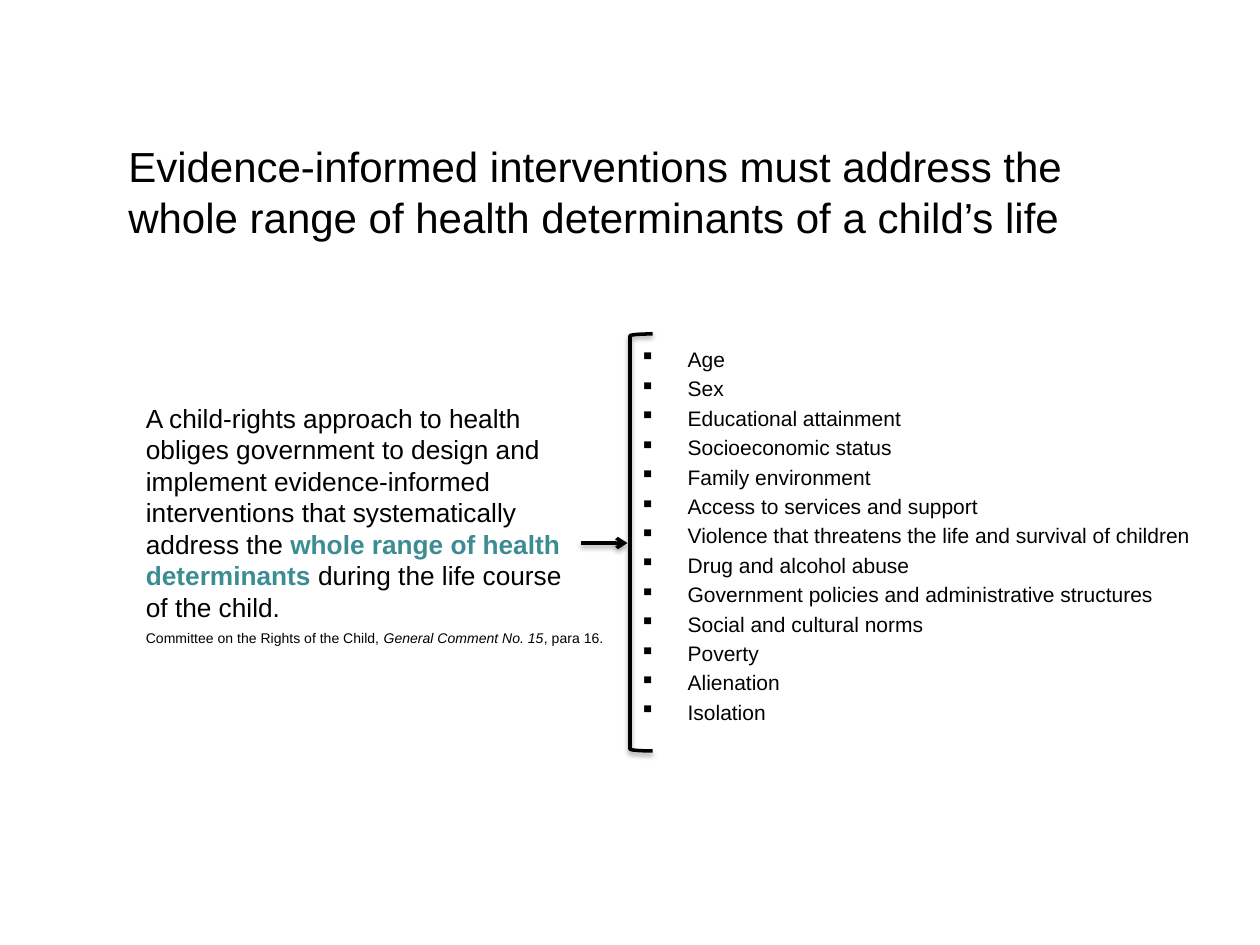
from lxml import etree
from pptx import Presentation
from pptx.dml.color import RGBColor
from pptx.enum.shapes import MSO_CONNECTOR, MSO_SHAPE
from pptx.oxml import parse_xml
from pptx.oxml.ns import nsdecls, qn
from pptx.util import Inches, Pt

BLACK = RGBColor(0x00, 0x00, 0x00)
TEAL = RGBColor(0x3C, 0x8C, 0x93)
LEFT_BRACKET = MSO_SHAPE.LEFT_BRACKET
STRAIGHT = MSO_CONNECTOR.STRAIGHT

DETERMINANTS = [
    "Age",
    "Sex",
    "Educational attainment",
    "Socioeconomic status",
    "Family environment",
    "Access to services and support",
    "Violence that threatens the life and survival of children",
    "Drug and alcohol abuse",
    "Government policies and administrative structures",
    "Social and cultural norms",
    "Poverty",
    "Alienation",
    "Isolation",
]


def add_run(paragraph, text, *, size, color=BLACK, bold=False, italic=False, font="Arial"):
    run = paragraph.add_run()
    run.text = text
    run.font.name = font
    run.font.size = Pt(size)
    run.font.color.rgb = color
    run.font.bold = bold
    run.font.italic = italic


def add_bullet(paragraph, indent):
    """Give the paragraph a square bullet with a hanging indent."""
    properties = paragraph._p.get_or_add_pPr()
    properties.set("marL", str(indent))
    properties.set("indent", str(-indent))
    etree.SubElement(properties, qn("a:buChar")).set("char", "▪")


class SlideBuilder:
    line_width = Pt(2)
    leading = 1.2
    bullet_indent = Inches(0.38)

    def __init__(self, slide):
        self.slide = slide

    def style_line(self, shape):
        """Apply the black line and its soft shadow."""
        shape.line.color.rgb = BLACK
        shape.line.width = self.line_width
        shape._element.spPr.append(parse_xml(
            f'<a:effectLst {nsdecls("a")}>'
            f'<a:outerShdw blurRad="{Pt(3.1)}" dist="{Pt(1.6)}" dir="5400000" rotWithShape="0">'
            '<a:srgbClr val="000000"><a:alpha val="38000"/></a:srgbClr>'
            '</a:outerShdw></a:effectLst>'))

    def bracket(self, left, top, width, height):
        shape = self.slide.shapes.add_shape(
            LEFT_BRACKET, Inches(left), Inches(top), Inches(width), Inches(height))
        shape.fill.background()
        self.style_line(shape)

    def arrow(self, start, end):
        connector = self.slide.shapes.add_connector(
            STRAIGHT, *(Inches(value) for value in (*start, *end)))
        self.style_line(connector)
        etree.SubElement(connector.line._get_or_add_ln(), qn("a:tailEnd")).set("type", "arrow")

    def text(self, left, top, width, height, paragraphs, *, size, bullets=False, wrap=True):
        """Add a text box; each paragraph is a list of (text, format) runs."""
        box = self.slide.shapes.add_textbox(
            Inches(left), Inches(top), Inches(width), Inches(height))
        frame = box.text_frame
        frame.word_wrap = wrap
        for index, runs in enumerate(paragraphs):
            paragraph = frame.add_paragraph() if index else frame.paragraphs[0]
            if bullets:
                add_bullet(paragraph, self.bullet_indent)
            paragraph.line_spacing = Pt(size * self.leading)
            if index:
                paragraph.space_before = Pt(size * 0.2)
            for content, style in runs:
                add_run(paragraph, content, size=size, **style)


def main():
    presentation = Presentation()
    presentation.slide_width = Inches(10)
    presentation.slide_height = Inches(7.5)
    builder = SlideBuilder(presentation.slides.add_slide(presentation.slide_layouts[6]))

    builder.bracket(5, 2.65, 0.18, 3.31)
    builder.text(0.92, 1.07, 7.86, 0.87, [[
        ("Evidence-informed interventions must address the whole range of health "
         "determinants of a child’s life", {}),
    ]], size=24)
    builder.text(1.06, 3.14, 3.53, 1.86, [[
        ("A child-rights approach to health obliges government to design and implement "
         "evidence-informed interventions that systematically address the ", {}),
        ("whole range of health determinants", {"color": TEAL, "bold": True}),
        (" during the life course of the child.", {}),
    ]], size=15)
    builder.text(4.98, 2.7, 5.13, 3.17,
                 [[(determinant, {})] for determinant in DETERMINANTS],
                 size=12, bullets=True)
    builder.text(1.06, 4.95, 3.86, 0.29, [[
        ("Committee on the Rights of the Child, ", {}),
        ("General Comment No. 15", {"italic": True}),
        (", para 16.", {}),
    ]], size=8, wrap=False)
    builder.arrow((4.61, 4.31), (4.98, 4.31))

    presentation.save("out.pptx")


if __name__ == "__main__":
    main()
